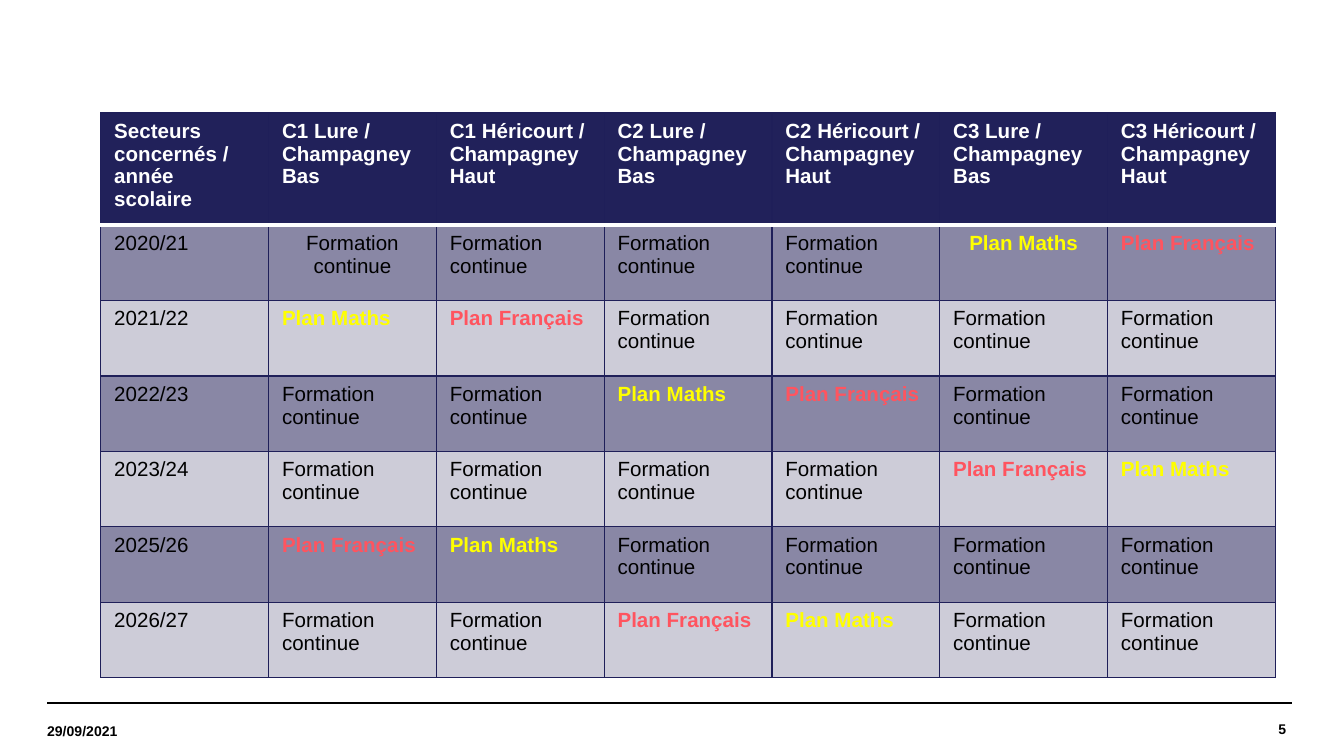
from lxml import etree
from pptx import Presentation
from pptx.dml.color import RGBColor
from pptx.enum import shapes, text
from pptx.oxml import ns
from pptx.util import Inches, Pt

FONT = "Arial"
NAVY, BORDER, WHITE, BLACK = "21215A", "1F1F59", "FFFFFF", "000000"
BANDS = ["8987A5", "CDCCD8"]

TRAINING, MATHS, FRENCH = "Formation continue", "Plan Maths", "Plan Français"
PLAN_COLORS = {MATHS: "FFFF00", FRENCH: "FF545F"}

HEADERS = ["Secteurs concernés / année scolaire"] + [
    f"C{cycle} {sector}"
    for cycle in (1, 2, 3)
    for sector in ("Lure / Champagney Bas", "Héricourt / Champagney Haut")
]
# Sector columns holding a plan each year; every other one is ongoing training.
PLANS = {
    "2020/21": {5: MATHS, 6: FRENCH},
    "2021/22": {1: MATHS, 2: FRENCH},
    "2022/23": {3: MATHS, 4: FRENCH},
    "2023/24": {5: FRENCH, 6: MATHS},
    "2025/26": {1: FRENCH, 2: MATHS},
    "2026/27": {3: FRENCH, 4: MATHS},
}
CENTERED_CELLS = {(1, 1), (1, 5)}


def rgb(color):
    return RGBColor.from_string(color)


def write(frame, content, size=11, color=BLACK, bold=False, align=text.PP_ALIGN.LEFT):
    frame.word_wrap = True
    paragraph = frame.paragraphs[0]
    paragraph.alignment = align
    run = paragraph.add_run()
    run.text = content
    run.font.name = FONT
    run.font.size = Pt(size)
    run.font.bold = bold
    run.font.color.rgb = rgb(color)


def add_footer_text(slide, content, left, top, width, height, align):
    frame = slide.shapes.add_textbox(
        Inches(left), Inches(top), Inches(width), Inches(height)).text_frame
    frame.margin_left = frame.margin_right = frame.margin_top = frame.margin_bottom = 0
    frame.vertical_anchor = text.MSO_ANCHOR.MIDDLE
    write(frame, content, size=7.5, bold=True, align=align)


def add_rule(slide, left, right, y):
    line = slide.shapes.add_connector(
        shapes.MSO_CONNECTOR.STRAIGHT, Inches(left), Inches(y), Inches(right), Inches(y))
    line.line.color.rgb = rgb(BLACK)
    line.line.width = Pt(0.8)
    etree.SubElement(line._element.spPr, ns.qn("a:effectLst"))


def set_borders(cell, **sides):
    """Give each side (L, R, T, B, in that order) a (colour, points) line."""
    properties = cell._tc.get_or_add_tcPr()
    for position, (side, (color, width)) in enumerate(sides.items()):
        line = etree.Element(ns.qn(f"a:ln{side}"), w=str(Pt(width)))
        fill = etree.SubElement(line, ns.qn("a:solidFill"))
        etree.SubElement(fill, ns.qn("a:srgbClr"), val=color)
        properties.insert(position, line)


def format_cell(cell, fill, top, bottom):
    cell.fill.solid()
    cell.fill.fore_color.rgb = rgb(fill)
    side = (BORDER, 0.75)
    set_borders(cell, L=side, R=side, T=top, B=bottom)


def add_schedule(slide):
    rows, columns = len(PLANS) + 1, len(HEADERS)
    left, top, width, height = Inches(0.75), Inches(0.84), Inches(8.74), Inches(4.19)
    header_height = Inches(0.82)
    table = slide.shapes.add_table(rows, columns, left, top, width, height).table
    for column in table.columns:
        column.width = width // columns
    for row in table.rows:
        row.height = (height - header_height) // len(PLANS)
    table.rows[0].height = header_height

    thin, divider = (BORDER, 0.75), (WHITE, 2)
    for index, header in enumerate(HEADERS):
        cell = table.cell(0, index)
        format_cell(cell, NAVY, thin, divider)
        write(cell.text_frame, header, color=WHITE, bold=True)

    for row, (year, plans) in enumerate(PLANS.items(), start=1):
        labels = [year] + [plans.get(index, TRAINING) for index in range(1, columns)]
        for index, label in enumerate(labels):
            cell = table.cell(row, index)
            format_cell(cell, BANDS[(row - 1) % 2], divider if row == 1 else thin, thin)
            centered = (row, index) in CENTERED_CELLS
            write(cell.text_frame, label,
                  color=PLAN_COLORS.get(label, BLACK), bold=label in PLAN_COLORS,
                  align=text.PP_ALIGN.CENTER if centered else text.PP_ALIGN.LEFT)


def main():
    presentation = Presentation()
    presentation.slide_width = Inches(10)
    presentation.slide_height = presentation.slide_width * 9 // 16
    slide = presentation.slides.add_slide(presentation.slide_layouts[6])

    for left in (0.35, 0.39):
        add_rule(slide, left, left + 9.22, 5.23)
    add_footer_text(slide, "5", 8.09, 5.23, 1.48, 0.39, text.PP_ALIGN.RIGHT)
    add_footer_text(slide, "29/09/2021", 0.35, 5.25, 1.28, 0.38, text.PP_ALIGN.LEFT)
    add_schedule(slide)

    presentation.save("out.pptx")


if __name__ == "__main__":
    main()
